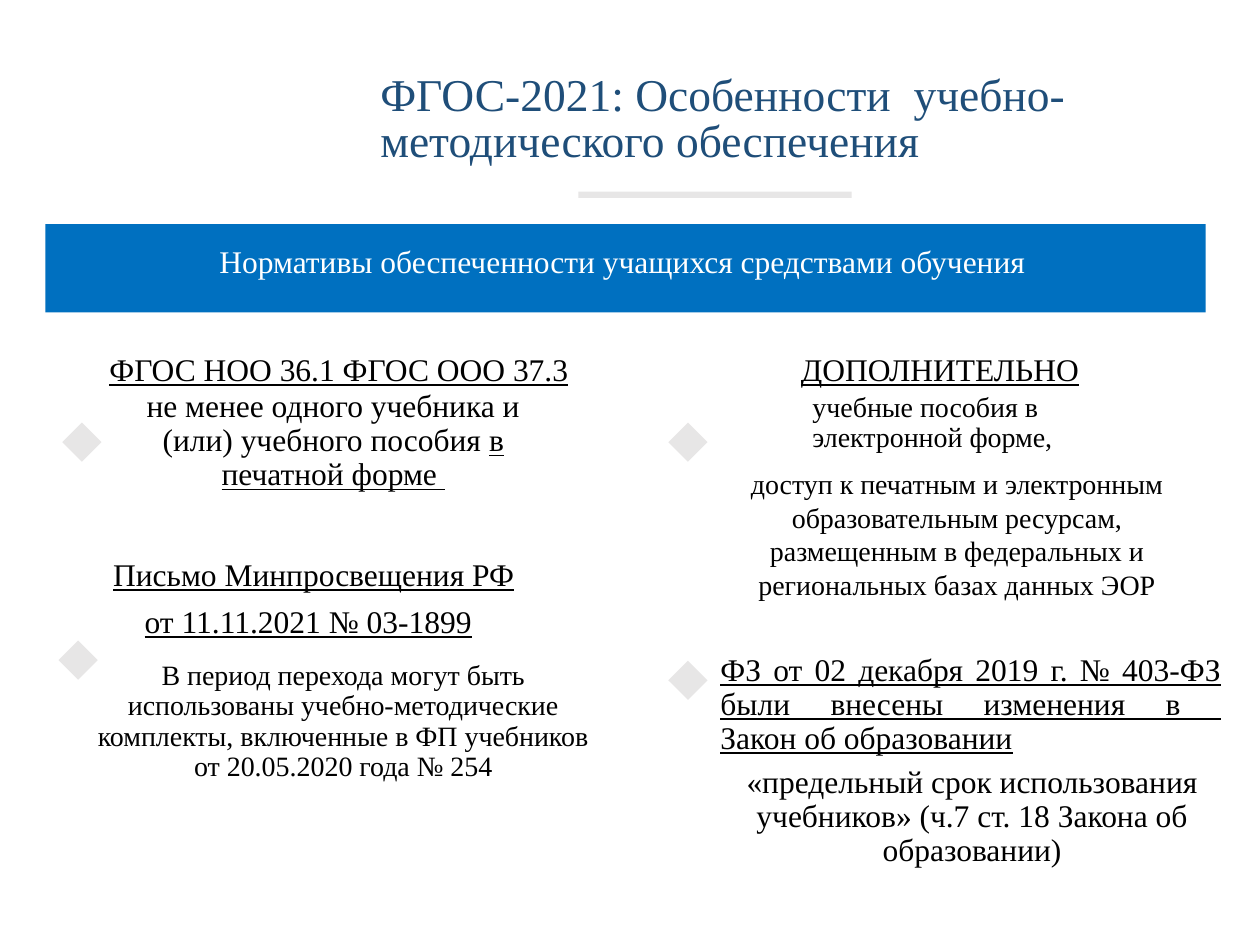
from pptx import Presentation
from pptx.dml.color import RGBColor
from pptx.enum.shapes import MSO_SHAPE as Kind
from pptx.enum.text import MSO_ANCHOR as Anchor, PP_ALIGN as Align
from pptx.util import Inches, Pt

BLUE, NAVY, GREY, BLACK, WHITE = "0070C0", "1F4E79", "E7E6E6", "000000", "FFFFFF"


def tint(code):
    return RGBColor.from_string(code)


class Page:
    """Hold the text style and the slide being drawn."""

    def __init__(self, slide, font="Times New Roman"):
        self.slide = slide
        self.font = font

    def block(self, left, top, wide, high, fill, turn=0):
        box = self.slide.shapes.add_shape(
            Kind.RECTANGLE, Inches(left), Inches(top), Inches(wide), Inches(high))
        box.shadow.inherit = False
        box.fill.solid()
        box.fill.fore_color.rgb = tint(fill)
        box.line.fill.background()
        box.rotation = turn

    def mark(self, left, top):
        self.block(left, top, 0.22, 0.22, GREY, turn=45)

    def text(self, area, words, size=18, color=BLACK, align=Align.CENTER,
             anchor=Anchor.TOP, pad=(0.1, 0.1, 0.1, 0.1), pitch=0.9,
             gap=0, under=False, tail="", indent=0):
        box = self.slide.shapes.add_textbox(*map(Inches, area))
        frame = box.text_frame
        frame.word_wrap = True
        frame.vertical_anchor = anchor
        (frame.margin_left, frame.margin_top,
         frame.margin_right, frame.margin_bottom) = map(Inches, pad)
        lines = words.split("\n")
        for i, line in enumerate(lines):
            para = frame.add_paragraph() if i else frame.paragraphs[0]
            para.alignment = align
            para.line_spacing = pitch
            if i:
                para.space_before = Pt(gap)
                para._p.get_or_add_pPr().set("marL", str(Inches(indent)))
            for j, part in enumerate(line.split("\v")):
                if j:
                    para.add_line_break()
                self.run(para, part, size, color, under)
            if tail and i == len(lines) - 1:
                self.run(para, tail, size, color, True)

    def run(self, para, words, size, color, under):
        run = para.add_run()
        run.text = words
        font = run.font
        font.name, font.size, font.underline = self.font, Pt(size), under
        font.color.rgb = tint(color)


def main():
    deck = Presentation()
    deck.slide_width, deck.slide_height = Inches(10), Inches(7.5)
    page = Page(deck.slides.add_slide(deck.slide_layouts[6]))
    slim = (0.1, 0.05, 0.1, 0.05)

    page.block(0.36, 1.78, 9.21, 0.7, BLUE)
    page.text((2.92, 0.54, 6.74, 0.84),
              "ФГОС-2021: Особенности  учебно-\nметодического обеспечения",
              size=26, color=NAVY, align=Align.LEFT, pad=slim, pitch=0.85)
    page.block(4.59, 1.52, 2.17, 0.05, GREY)
    page.text((0.34, 1.73, 8.77, 0.68),
              "Нормативы обеспеченности учащихся средствами обучения",
              color=WHITE, anchor=Anchor.MIDDLE, pad=(0.53, 0.05, 0.1, 0.05), pitch=1)

    for left, top in ((0.54, 3.4), (0.51, 5.13), (5.35, 3.4), (5.35, 5.29)):
        page.mark(left, top)

    page.text((0.77, 2.76, 4.02, 0.37), "ФГОС НОО 36.1 ФГОС ООО 37.3",
              align=Align.LEFT, anchor=Anchor.MIDDLE, under=True)
    page.text((0.79, 3, 3.71, 0.71), "не менее одного учебника и (или) учебного пособия ",
              tail="в печатной форме ")
    page.text((0.8, 4.45, 3.8, 0.62),
              "Письмо Минпросвещения РФ\nот 11.11.2021 № 03-1899",
              align=Align.JUSTIFY, anchor=Anchor.MIDDLE, under=True, gap=7.5, indent=0.25)
    page.text((0.66, 5.15, 4.13, 0.71),
              "В период перехода могут быть использованы учебно-методические "
              "комплекты, включенные в ФП учебников от 20.05.2020 года № 254", size=16)

    page.text((6.12, 2.76, 2.68, 0.37), "ДОПОЛНИТЕЛЬНО", anchor=Anchor.MIDDLE, under=True)
    page.text((6.35, 3.02, 3.16, 0.71), "учебные пособия в электронной форме,",
              size=16, align=Align.LEFT)
    page.text((5.7, 3.42, 3.79, 1.35),
              "доступ к печатным и электронным образовательным ресурсам, "
              "размещенным в федеральных и региональных базах данных ЭОР",
              size=16, anchor=Anchor.BOTTOM, pad=(0, 0, 0, 0), pitch=1)
    page.text((5.62, 5.15, 4.17, 0.9),
              "ФЗ от 02 декабря 2019 г. № 403-ФЗ были внесены изменения в \v"
              "Закон об образовании",
              align=Align.JUSTIFY, anchor=Anchor.MIDDLE, under=True)
    page.text((5.67, 6.17, 4.09, 0.64),
              "«предельный срок использования учебников» (ч.7 ст. 18 Закона об образовании)",
              anchor=Anchor.MIDDLE)

    deck.save("out.pptx")


if __name__ == "__main__":
    main()
